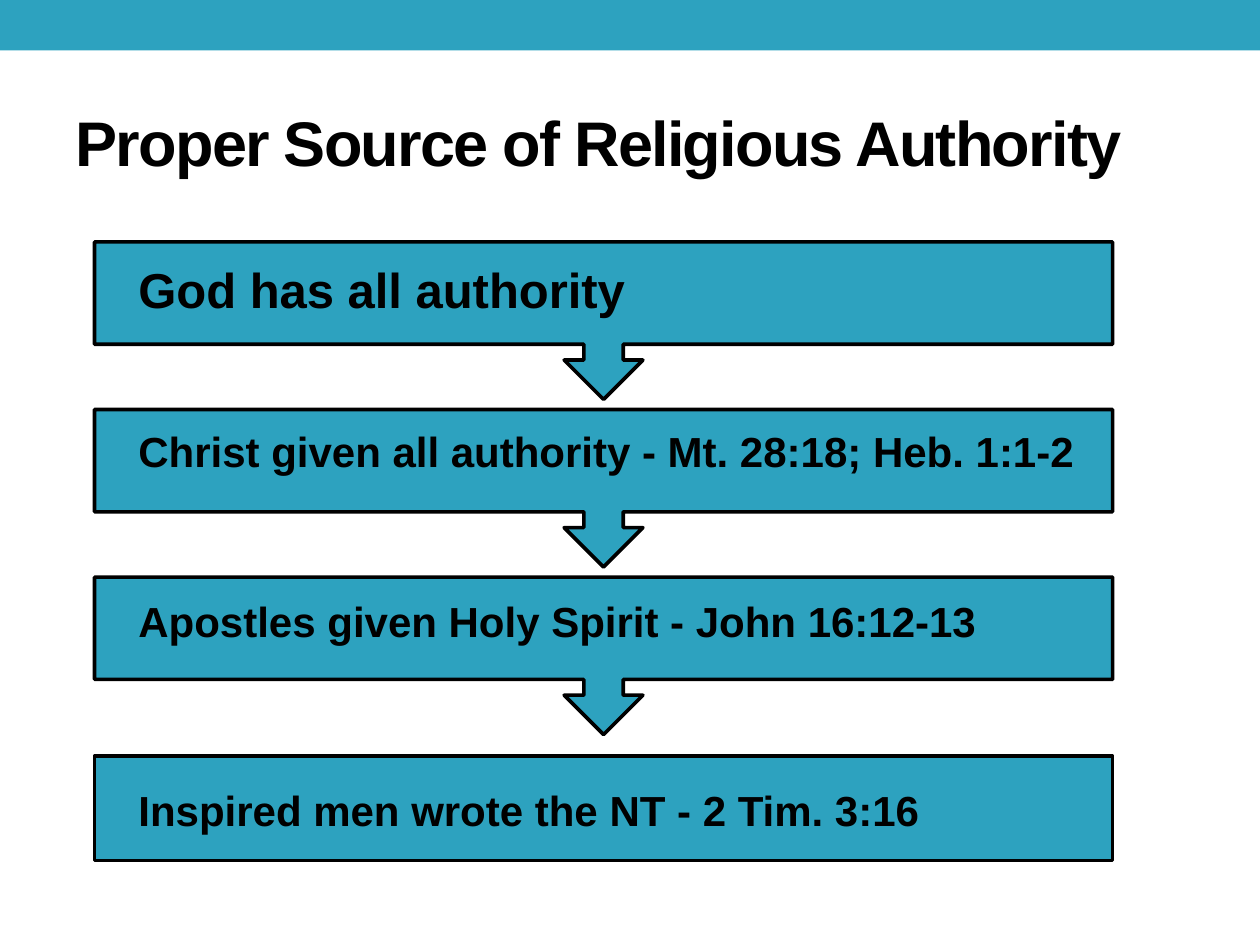
from dataclasses import dataclass

from pptx import Presentation
from pptx.dml.color import RGBColor
from pptx.enum.shapes import MSO_SHAPE
from pptx.enum.text import MSO_ANCHOR, MSO_AUTO_SIZE, PP_ALIGN
from pptx.util import Inches, Pt

RECT = MSO_SHAPE.RECTANGLE
CALLOUT = MSO_SHAPE.DOWN_ARROW_CALLOUT
MIDDLE, TOP = MSO_ANCHOR.MIDDLE, MSO_ANCHOR.TOP
NO_FIT, GROW = MSO_AUTO_SIZE.NONE, MSO_AUTO_SIZE.SHAPE_TO_FIT_TEXT
LEFT = PP_ALIGN.LEFT


@dataclass(frozen=True)
class Theme:
    font: str = "Arial"
    text: RGBColor = RGBColor(0, 0, 0)
    accent: RGBColor = RGBColor(0x2D, 0xA2, 0xBF)
    title: int = 36
    lead: int = 28
    step: int = 24
    outline: float = 2.08


THEME = Theme()
STEP_LEFT, STEP_WIDTH = 0.75, 8.08
STEPS = [
    (CALLOUT, 1.92, 1.25, "God has all authority", 2.01, 7.58, THEME.lead),
    (CALLOUT, 3.25, 1.25, "Christ given all authority - Mt. 28:18; Heb. 1:1-2",
     3.33, 7.83, THEME.step),
    (CALLOUT, 4.58, 1.25, "Apostles given Holy Spirit - John 16:12-13",
     4.68, 7.58, THEME.step),
    (RECT, 6, 0.83, "Inspired men wrote the NT - 2 Tim. 3:16",
     6.18, 7.58, THEME.step),
]


def write(tf, text, size, anchor=TOP, fit=GROW, spacing=None):
    tf.word_wrap = True
    tf.auto_size = fit
    tf.vertical_anchor = anchor
    p = tf.paragraphs[0]
    p.alignment = LEFT
    r = p.add_run()
    r.text = text
    r.font.name = THEME.font
    r.font.size = Pt(size)
    r.font.bold = True
    r.font.color.rgb = THEME.text
    if spacing is not None:
        r._r.get_or_add_rPr().set("spc", str(spacing * 100))


def add_block(s, kind, x, y, w, h, outlined=True):
    sp = s.shapes.add_shape(kind, Inches(x), Inches(y), Inches(w), Inches(h))
    sp.shadow.inherit = False
    sp.fill.solid()
    sp.fill.fore_color.rgb = THEME.accent
    if outlined:
        sp.line.color.rgb = THEME.text
        sp.line.width = Pt(THEME.outline)
    else:
        sp.line.fill.background()


def add_title(s, text):
    sp = s.shapes.title
    sp.left, sp.top = Inches(0.5), Inches(0.58)
    sp.width, sp.height = Inches(9), Inches(1.08)
    write(sp.text_frame, text, THEME.title, anchor=MIDDLE, fit=NO_FIT, spacing=-1)


def add_label(s, text, y, w, size):
    h = 0.57 if size == THEME.lead else 0.5
    sp = s.shapes.add_textbox(Inches(1), Inches(y), Inches(w), Inches(h))
    write(sp.text_frame, text, size)


def main():
    prs = Presentation()
    prs.slide_width, prs.slide_height = Inches(10), Inches(7.5)
    s = prs.slides.add_slide(prs.slide_layouts[5])
    add_block(s, RECT, 0, 0, 10, 0.4, outlined=False)
    add_title(s, "Proper Source of Religious Authority")
    for kind, y, h, text, text_y, text_w, size in STEPS:
        add_block(s, kind, STEP_LEFT, y, STEP_WIDTH, h)
        add_label(s, text, text_y, text_w, size)
    prs.save("out.pptx")


if __name__ == "__main__":
    main()
